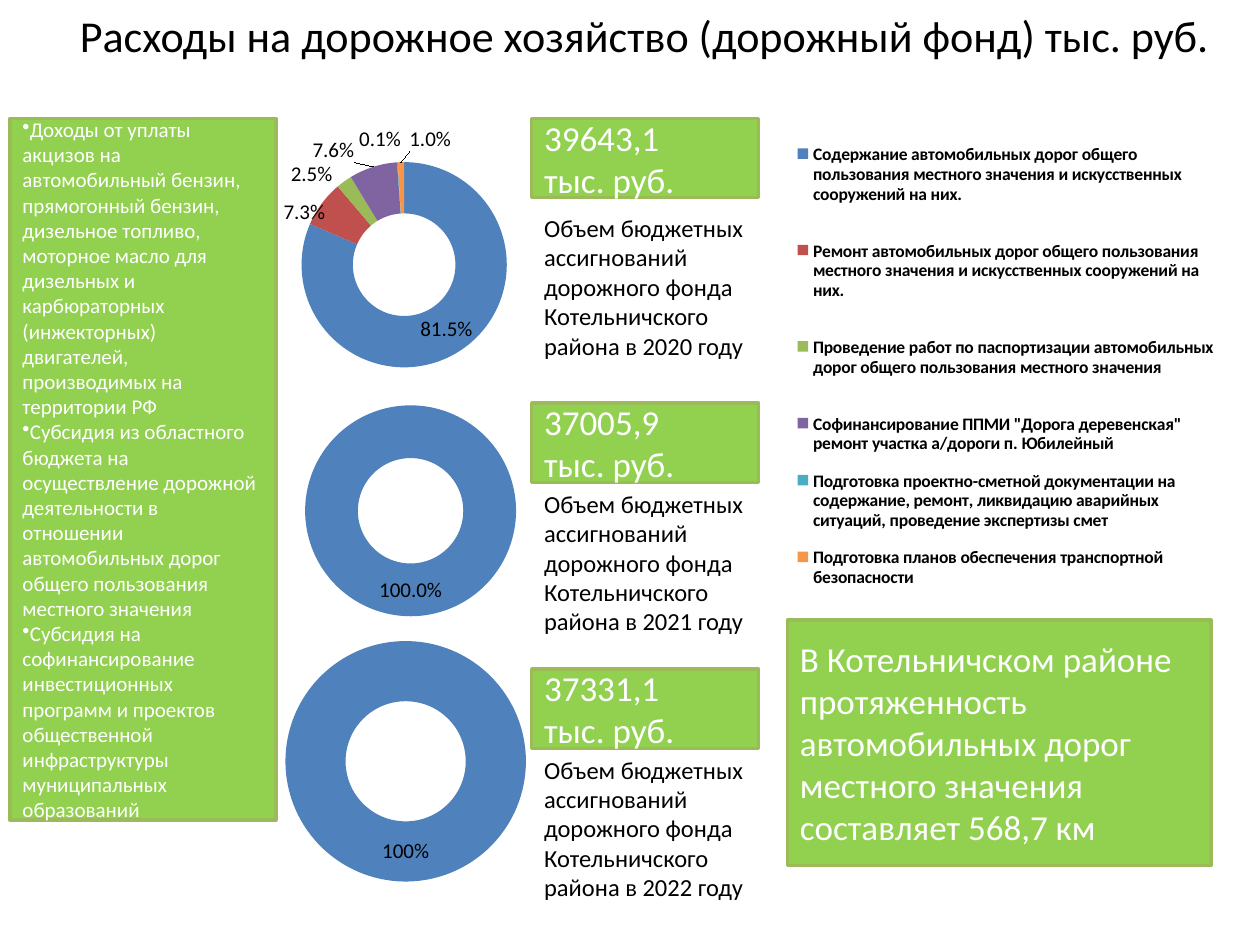
from dataclasses import dataclass
from typing import NamedTuple, Optional

from lxml import etree
from pptx import Presentation
from pptx.chart.data import CategoryChartData
from pptx.dml.color import RGBColor
from pptx.enum.chart import XL_CHART_TYPE, XL_LEGEND_POSITION
from pptx.enum.shapes import MSO_SHAPE
from pptx.enum.text import MSO_ANCHOR, PP_ALIGN
from pptx.oxml import parse_xml
from pptx.oxml.ns import nsdecls, qn
from pptx.util import Inches, Pt

DOUGHNUT = XL_CHART_TYPE.DOUGHNUT
LEGEND_RIGHT = XL_LEGEND_POSITION.RIGHT
RECTANGLE = MSO_SHAPE.RECTANGLE
MIDDLE, TOP = MSO_ANCHOR.MIDDLE, MSO_ANCHOR.TOP
LEFT, CENTER = PP_ALIGN.LEFT, PP_ALIGN.CENTER


@dataclass(frozen=True)
class Theme:
    font: str = "Calibri"
    dark: str = "000000"
    light: str = "FFFFFF"
    box_fill: str = "92D050"
    box_line: str = "9BBB59"
    slices: tuple = ("4F81BD", "C0504D", "9BBB59", "8064A2", "4BACC6", "F79646")
    title_size: float = 25.2
    box_size: float = 20
    caption_size: float = 14
    small_size: float = 12
    legend_size: float = 10
    chart_size: float = 18


class Area(NamedTuple):
    """Left, top, width, height: inches on the slide, fractions in a chart."""
    left: float
    top: float
    width: float
    height: float


class Year(NamedTuple):
    year: int
    amount: str
    box_top: float
    caption_top: float


class Doughnut(NamedTuple):
    area: Area
    categories: list
    values: list
    number_format: str
    plot: Optional[Area] = None
    legend: Optional[Area] = None
    label_shifts: dict = {}


THEME = Theme()
COLUMN_LEFT, COLUMN_WIDTH = 4.22, 1.8
BOX_HEIGHT, CAPTION_HEIGHT = 0.63, 1.28

YEARS = [
    Year(2020, "39643,1", 0.94, 1.64),
    Year(2021, "37005,9", 3.2, 3.83),
    Year(2022, "37331,1", 5.31, 5.94),
]

INCOME_SOURCES = [
    "Доходы от уплаты акцизов на автомобильный бензин, прямогонный бензин, "
    "дизельное топливо, моторное масло для дизельных и карбюраторных "
    "(инжекторных) двигателей, производимых на территории РФ",
    "Субсидия из областного бюджета на осуществление дорожной деятельности в "
    "отношении автомобильных дорог общего пользования местного значения",
    "Субсидия на софинансирование инвестиционных программ и проектов "
    "общественной инфраструктуры муниципальных образований",
]

EXPENSES = {
    "Содержание автомобильных дорог общего пользования местного значения и "
    "искусственных сооружений на них.\n": 0.815,
    "Ремонт автомобильных дорог общего пользования местного значения и "
    "искусственных сооружений на них.\n": 0.073,
    "Проведение работ по паспортизации автомобильных дорог общего пользования "
    "местного значения\n": 0.025,
    'Софинансирование ППМИ "Дорога деревенская" ремонт участка а/дороги '
    "п. Юбилейный": 0.076,
    "Подготовка проектно-сметной документации на содержание, ремонт, ликвидацию "
    "аварийных ситуаций, проведение экспертизы смет": 0.001,
    "Подготовка планов обеспечения транспортной безопасности": 0.01,
}

CHART_2021 = Doughnut(Area(2.09, 2.92, 2.42, 2.27), ["1"], [1], "0.0%",
                      plot=Area(0.137, 0.13, 0.692, 0.74))
CHART_2022 = Doughnut(Area(2.01, 4.95, 2.42, 2.27), ["1"], [1], "0%")
CHART_2020 = Doughnut(
    Area(2.25, 0.68, 7.54, 5.5), list(EXPENSES), list(EXPENSES.values()), "0.0%",
    plot=Area(0.019, 0.059, 0.216, 0.399),
    legend=Area(0.54, 0.06, 0.44, 0.69),
    label_shifts={1: (-0.04, -0.01), 2: (-0.05, -0.04), 3: (-0.05, -0.06),
                  4: (-0.02, -0.07), 5: (0.03, -0.07)},
)


def inches(area: Area) -> list:
    return [Inches(length) for length in area]


def style_font(font, size: float, color: str, bold: bool = False) -> None:
    font.name = THEME.font
    font.size = Pt(size)
    font.bold = bold
    font.color.rgb = RGBColor.from_string(color)


def write(shape, lines: list, size: float, color: str, anchor=TOP,
          alignment=LEFT, bullet: str = "") -> None:
    frame = shape.text_frame
    frame.word_wrap = True
    frame.vertical_anchor = anchor
    for number, line in enumerate(lines):
        paragraph = frame.add_paragraph() if number else frame.paragraphs[0]
        paragraph.alignment = alignment
        if bullet:
            properties = paragraph._p.get_or_add_pPr()
            etree.SubElement(properties, qn("a:buChar")).set("char", bullet)
        run = paragraph.add_run()
        run.text = line
        style_font(run.font, size, color)


def add_text(slide, area: Area, line: str, size: float, **options) -> None:
    write(slide.shapes.add_textbox(*inches(area)), [line], size, THEME.dark, **options)


def add_box(slide, area: Area, lines: list, size: float, bullet: str = "") -> None:
    shape = slide.shapes.add_shape(RECTANGLE, *inches(area))
    shape.shadow.inherit = False
    shape.fill.solid()
    shape.fill.fore_color.rgb = RGBColor.from_string(THEME.box_fill)
    shape.line.color.rgb = RGBColor.from_string(THEME.box_line)
    shape.line.width = Pt(2)
    write(shape, lines, size, THEME.light, anchor=MIDDLE, bullet=bullet)


def manual_layout(target: str, **values: float):
    """Chart layout element; target is "inner" for a plot area, else empty."""
    children = f'<c:layoutTarget val="{target}"/>' if target else ""
    if target or "w" in values:
        children += '<c:xMode val="edge"/><c:yMode val="edge"/>'
    children += "".join(f'<c:{key} val="{value}"/>' for key, value in values.items())
    return parse_xml(f'<c:layout {nsdecls("c")}><c:manualLayout>{children}'
                     "</c:manualLayout></c:layout>")


def place_part(part, area: Area, target: str = "") -> None:
    """Give a plot area or legend its place, ahead of the element that follows."""
    for old in part.findall(qn("c:layout")):
        part.remove(old)
    position = part.find(qn("c:legendPos"))
    index = 0 if position is None else part.index(position) + 1
    part.insert(index, manual_layout(target, x=area.left, y=area.top,
                                     w=area.width, h=area.height))


def shift_label(series, index: int, shift: tuple, number_format: str) -> None:
    style_font(series.points[index].data_label.font, THEME.small_size, THEME.dark)
    label = series.data_labels._element.xpath(f'c:dLbl[c:idx/@val="{index}"]')[0]
    layout = manual_layout("", x=shift[0], y=shift[1])
    label.find(qn("c:idx")).addnext(layout)
    layout.addnext(parse_xml(f'<c:numFmt {nsdecls("c")} formatCode="{number_format}" '
                             'sourceLinked="0"/>'))


def add_doughnut(slide, spec_: Doughnut) -> None:
    data = CategoryChartData()
    data.categories = spec_.categories
    data.add_series("Series 1", spec_.values)
    chart = slide.shapes.add_chart(DOUGHNUT, *inches(spec_.area), data).chart
    chart.has_title = False
    style_font(chart.font, THEME.chart_size, THEME.dark)
    plot = chart.plots[0]
    plot.vary_by_categories = True
    series = plot.series[0]
    for index in range(len(spec_.values)):
        fill = series.points[index].format.fill
        fill.solid()
        fill.fore_color.rgb = RGBColor.from_string(THEME.slices[index])
    labels = series.data_labels
    labels.show_value = True
    labels.number_format = spec_.number_format
    labels.number_format_is_linked = False
    style_font(labels.font, THEME.small_size, THEME.dark)
    for index, shift in spec_.label_shifts.items():
        shift_label(series, index, shift, spec_.number_format)
    if spec_.plot:
        place_part(chart._chartSpace.chart.plotArea, spec_.plot, "inner")
    chart.has_legend = spec_.legend is not None
    if spec_.legend:
        chart.legend.position = LEGEND_RIGHT
        chart.legend.include_in_layout = False
        style_font(chart.legend.font, THEME.legend_size, THEME.dark, bold=True)
        place_part(chart.legend._element, spec_.legend)


def main() -> None:
    presentation = Presentation()
    presentation.slide_width, presentation.slide_height = Inches(10), Inches(7.5)
    slide = presentation.slides.add_slide(presentation.slide_layouts[6])
    add_doughnut(slide, CHART_2021)
    add_text(slide, Area(0.23, 0, 9.77, 0.56),
             "Расходы на дорожное хозяйство (дорожный фонд) тыс. руб.",
             THEME.title_size, anchor=MIDDLE, alignment=CENTER)
    add_doughnut(slide, CHART_2022)
    for year in YEARS:
        add_box(slide, Area(COLUMN_LEFT, year.box_top, COLUMN_WIDTH, BOX_HEIGHT),
                [year.amount, "тыс. руб."], THEME.box_size)
        add_text(slide, Area(COLUMN_LEFT, year.caption_top, COLUMN_WIDTH, CAPTION_HEIGHT),
                 "Объем бюджетных ассигнований дорожного фонда Котельничского "
                 f"района в {year.year} году", THEME.caption_size)
    add_box(slide, Area(6.25, 4.92, 3.36, 1.95),
            ["В Котельничском районе протяженность автомобильных дорог местного "
             "значения составляет 568,7 км"], THEME.box_size)
    add_box(slide, Area(0.08, 0.94, 2.11, 5.57), INCOME_SOURCES, THEME.small_size, bullet="•")
    add_doughnut(slide, CHART_2020)
    presentation.save("out.pptx")


if __name__ == "__main__":
    main()
